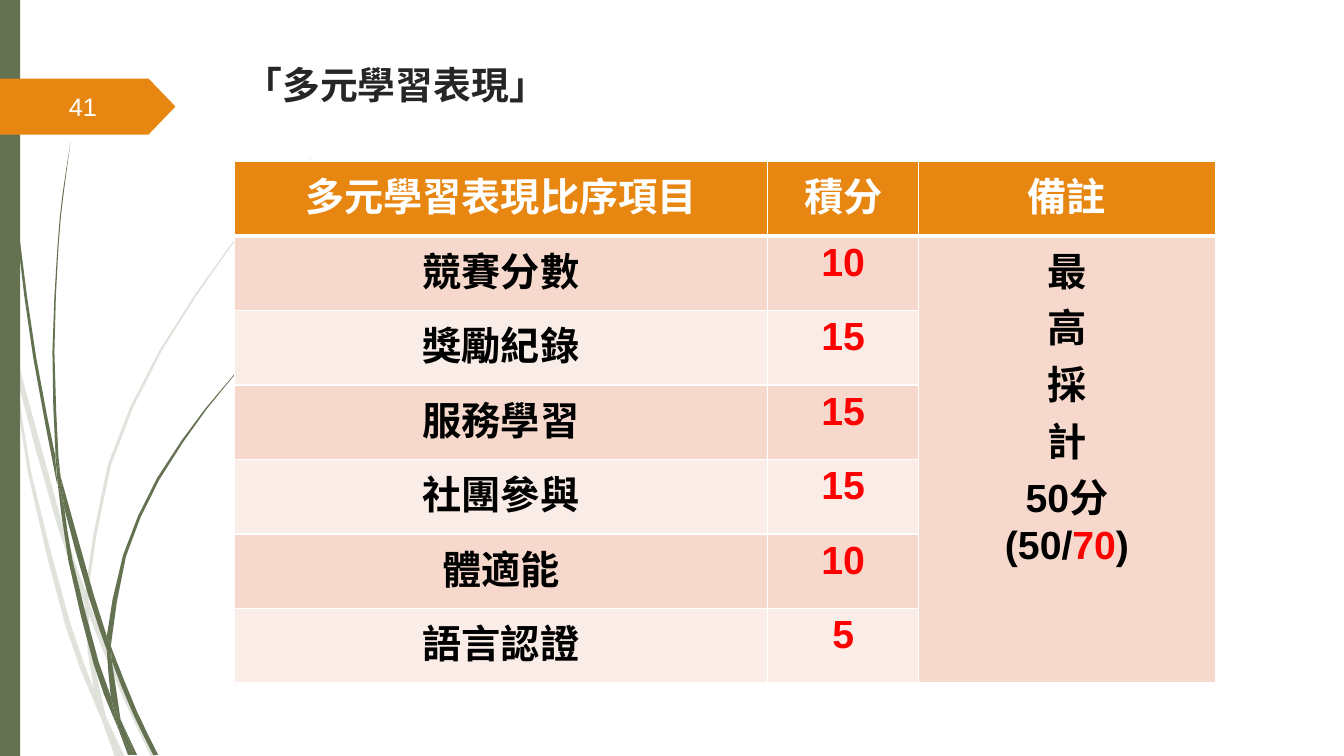
from math import dist
from typing import NamedTuple

from lxml import etree
from pptx import Presentation
from pptx import util as u
from pptx.dml import color
from pptx.enum import shapes, text
from pptx.oxml import ns

COLUMNS, ROWS = 1333.33, 750
CELL = u.Inches(0.01)
LONG_STEP = 45
FONT = "Arial"
COLORS = {
    "moss": "647252", "orange": "E78712", "white": "FFFFFF", "ink": "262626",
    "black": "000000", "red": "FF0000", "band": "F6D9CC", "pale": "FAEDE7",
}
Point = tuple[float, float]


class Area(NamedTuple):
    left: float
    top: float
    width: float
    height: float

    def emu(self) -> list[int]:
        return [round(length * CELL) for length in self]


class Wisp(NamedTuple):
    down: list[Point]
    back: list[Point]


class Score(NamedTuple):
    item: str
    points: str


FAINT_WISPS = [
    Wisp([(11, 350), (8, 322), (0, 282)], [(0, 299), (10, 344), (11, 350)]),
    Wisp([(14, 345), (17, 376), (57, 522), (84, 599)], [(85, 586), (62, 520), (14, 345)]),
    Wisp([(88, 596), (88, 610), (123, 694), (150, 751)], [(155, 751), (127, 692), (92, 607), (88, 596)]),
    Wisp([(105, 711), (119, 751)], [(124, 751), (105, 711)]),
    Wisp([(11, 350), (28, 470), (65, 621), (92, 693), (101, 714)],
         [(99, 707), (93, 683), (70, 619), (31, 469), (17, 376), (11, 350)]),
    Wisp([(84, 599), (87, 646), (93, 683), (96, 692), (105, 711)],
         [(104, 706), (91, 646), (88, 610), (88, 608), (84, 599)]),
    Wisp([(312, 153), (289, 175), (268, 197), (228, 244), (158, 348), (107, 461), (85, 584), (85, 586), (88, 596)],
         [(88, 584), (110, 462), (160, 349), (229, 245), (268, 198), (290, 175), (312, 153)]),
    Wisp([(101, 714), (114, 751)], [(119, 751), (101, 714)]),
    Wisp([(85, 586), (84, 599), (88, 608)], [(88, 610), (88, 596), (85, 586)]),
    Wisp([(93, 683), (99, 707), (101, 714), (119, 751)], [(119, 751), (105, 711), (96, 692), (93, 683)]),
]
DARK_WISPS = [
    Wisp([(3, 0), (3, 48), (7, 110), (17, 233), (33, 355), (56, 477), (57, 481)],
         [(55, 457), (55, 453), (36, 355), (19, 232), (8, 109), (5, 48), (3, 0)]),
    Wisp([(60, 472), (64, 505), (88, 592), (106, 645)], [(106, 633), (106, 631), (93, 590), (60, 472)]),
    Wisp([(110, 641), (111, 656), (132, 708), (152, 749)], [(157, 749), (136, 706), (113, 649), (110, 641)]),
    Wisp([(57, 477), (68, 557), (93, 659), (111, 708), (117, 722)],
         [(116, 717), (110, 691), (98, 657), (72, 556), (64, 505), (57, 477)]),
    Wisp([(70, 141), (62, 193), (57, 245), (52, 349), (55, 449), (60, 472)],
         [(58, 453), (54, 349), (58, 245), (63, 193), (70, 141)]),
    Wisp([(122, 719), (133, 749)], [(136, 749), (122, 719)]),
    Wisp([(55, 449), (55, 453), (57, 477), (64, 505)], [(60, 472), (55, 449)]),
    Wisp([(260, 344), (245, 358), (231, 373), (204, 405), (156, 474), (122, 551), (106, 631), (110, 641)],
         [(111, 633), (125, 552), (158, 476), (205, 406), (231, 374), (246, 359), (261, 344)]),
    Wisp([(117, 722), (127, 749)], [(131, 749), (117, 722)]),
    Wisp([(106, 645), (110, 692), (116, 706), (122, 719)], [(120, 716), (111, 656), (109, 651), (106, 645)]),
    Wisp([(106, 631), (106, 645), (109, 651), (111, 656)], [(110, 641), (106, 631)]),
    Wisp([(110, 691), (116, 717), (117, 722), (131, 749)], [(133, 749), (122, 719), (116, 706), (110, 691)]),
]
HEADINGS = ["多元學習表現比序項目", "積分", "備註"]
SCORES = [
    Score("競賽分數", "10"), Score("獎勵紀錄", "15"), Score("服務學習", "15"),
    Score("社團參與", "15"), Score("體適能", "10"), Score("語言認證", "5"),
]
CAP_LINES = ["最", "高", "採", "計", "50分", "(50/"]
TABLE_AREA = Area(232.5, 160.2, 973, 517.3)
TABLE_COLUMNS = [529, 150, 294]


def rgb(tone: str) -> color.RGBColor:
    return color.RGBColor.from_string(COLORS[tone])


def smooth(edge: list[Point]) -> list[Point]:
    padded = [edge[0], *edge, edge[-1]]
    curve = [edge[0]]
    for a, b, c, d in zip(padded, padded[1:], padded[2:], padded[3:]):
        if dist(b, c) > LONG_STEP:
            curve.append(tuple((9 * (q + r) - p - s) / 16 for p, q, r, s in zip(a, b, c, d)))
        curve.append(c)
    return curve


def paint(shape, tone: str) -> None:
    shape.shadow.inherit = False
    shape.fill.solid()
    shape.fill.fore_color.rgb = rgb(tone)
    shape.line.fill.background()


def draw_wisp(group, wisp: Wisp, opacity: int) -> None:
    outline = dict.fromkeys(smooth(wisp.down) + smooth(wisp.back))
    start, *rest = [(x * CELL, y * CELL) for x, y in outline]
    builder = group.shapes.build_freeform(*start, scale=1.0)
    builder.add_line_segments(rest, close=True)
    stalk = builder.convert_to_shape()
    paint(stalk, "moss")
    if opacity < 100:
        solid = stalk.fill._xPr.find(ns.qn("a:solidFill"))
        etree.SubElement(solid[0], ns.qn("a:alpha"), val=str(opacity * 1000))


def style(paragraph, size: float, tone: str, bold: bool = True, font: str = FONT) -> None:
    for run in paragraph.runs:
        run.font.size = u.Pt(size)
        run.font.name = font
        run.font.bold = bold
        run.font.color.rgb = rgb(tone)


def fill_cell(cell, words: str, tone: str, background: str, top: int = 1, bottom: int = 1) -> None:
    properties = cell._tc.get_or_add_tcPr()
    for side, points in zip("LRTB", (1, 1, top, bottom)):
        border = etree.SubElement(properties, ns.qn(f"a:ln{side}"), w=str(u.Pt(points)))
        solid = etree.SubElement(border, ns.qn("a:solidFill"))
        etree.SubElement(solid, ns.qn("a:srgbClr"), val=COLORS["white"])
    cell.fill.solid()
    cell.fill.fore_color.rgb = rgb(background)
    cell.text_frame.text = words
    for paragraph in cell.text_frame.paragraphs:
        paragraph.alignment = text.PP_ALIGN.CENTER
        style(paragraph, 28, tone)


def draw_scores(slide) -> None:
    row_count = len(SCORES) + 1
    frame = slide.shapes.add_table(row_count, len(HEADINGS), *TABLE_AREA.emu())
    table = frame.table
    for column, width in zip(table.columns, TABLE_COLUMNS):
        column.width = width * CELL
    for row in table.rows:
        row.height = round(TABLE_AREA.height * CELL / row_count)
    for index, heading in enumerate(HEADINGS):
        fill_cell(table.cell(0, index), heading, "white", "orange", bottom=3)
    for index, score in enumerate(SCORES, 1):
        background = "band" if index % 2 else "pale"
        top = 3 if index == 1 else 1
        fill_cell(table.cell(index, 0), score.item, "black", background, top)
        fill_cell(table.cell(index, 1), score.points, "red", background, top)
    cap = table.cell(1, 2)
    cap.merge(table.cell(row_count - 1, 2))
    fill_cell(cap, "\n".join(CAP_LINES), "black", "band", top=3)
    ratio = cap.text_frame.paragraphs[-1]
    for part in ("70", ")"):
        ratio.add_run().text = part
    style(ratio, 28, "black")
    ratio.runs[1].font.color.rgb = rgb("red")


def draw_title(slide) -> None:
    title = slide.shapes.title
    title.left, title.top, title.width, title.height = Area(232.5, 56, 975, 70).emu()
    frame = title.text_frame
    frame.text = "「多元學習表現」"
    frame.word_wrap = True
    frame.auto_size = text.MSO_AUTO_SIZE.NONE
    frame.vertical_anchor = text.MSO_ANCHOR.TOP
    frame.paragraphs[0].alignment = text.PP_ALIGN.LEFT
    style(frame.paragraphs[0], 27, "ink", font="TeX Gyre Adventor")


def draw_page_number(slide) -> None:
    number = slide.shapes.add_textbox(*Area(58.4, 86, 85, 40).emu()).text_frame
    number.word_wrap = True
    number.vertical_anchor = text.MSO_ANCHOR.MIDDLE
    number.text = "41"
    style(number.paragraphs[0], 18, "white", bold=False)


def main() -> None:
    deck = Presentation()
    deck.slide_width, deck.slide_height = round(COLUMNS * CELL), ROWS * CELL
    slide = deck.slides.add_slide(deck.slide_layouts[5])
    for wisps, opacity in ((FAINT_WISPS, 20), (DARK_WISPS, 100)):
        group = slide.shapes.add_group_shape()
        for wisp in wisps:
            draw_wisp(group, wisp, opacity)
    side_bar = slide.shapes.add_shape(shapes.MSO_SHAPE.RECTANGLE, *Area(0, 0, 20, ROWS).emu())
    paint(side_bar, "moss")
    page_tag = slide.shapes.add_shape(shapes.MSO_SHAPE.PENTAGON, *Area(-1, 78, 175, 55.5).emu())
    page_tag.adjustments[0] = 0.48
    paint(page_tag, "orange")
    draw_title(slide)
    draw_scores(slide)
    draw_page_number(slide)
    deck.save("out.pptx")


if __name__ == "__main__":
    main()
